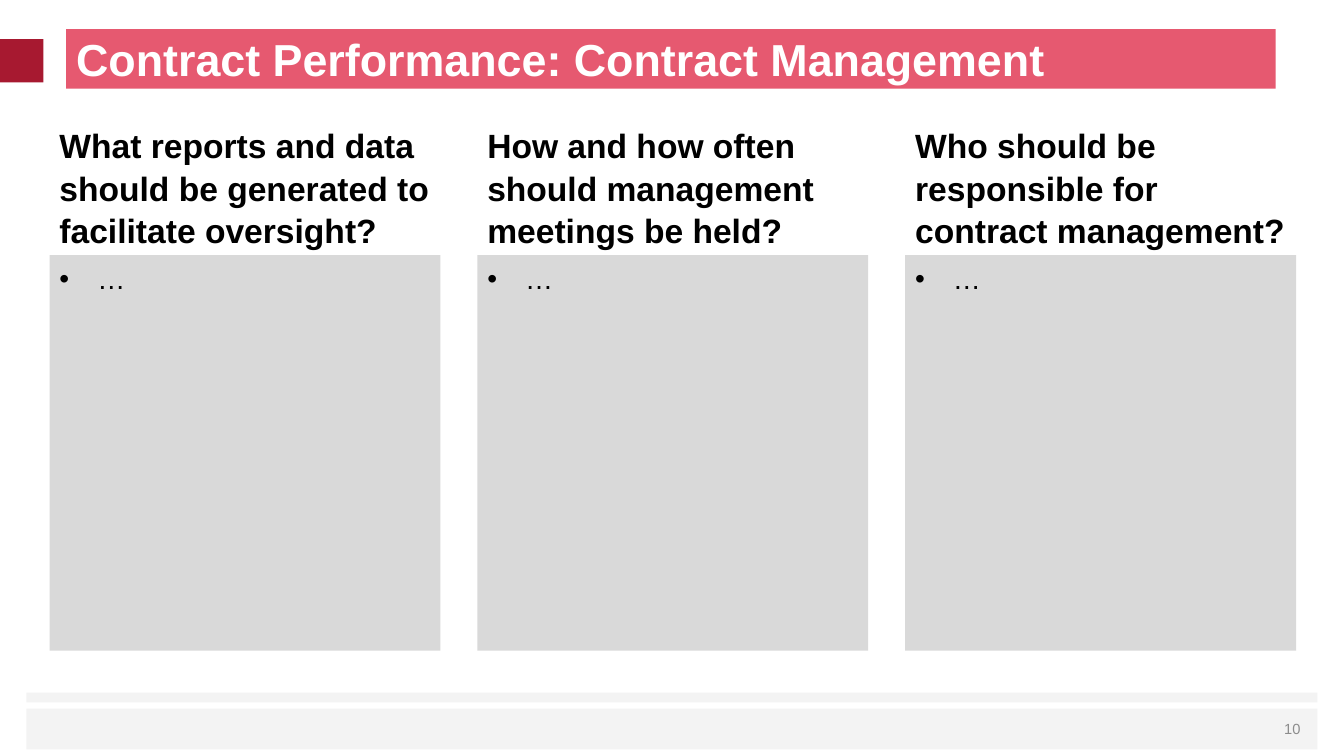
import pptx
import pptx.util
import pptx.dml.color
import pptx.enum.shapes
import pptx.enum.text
import lxml.etree
from pptx.oxml.ns import qn

Pt = pptx.util.Pt
RGB = pptx.dml.color.RGBColor.from_string
ALIGN = pptx.enum.text.PP_ALIGN
ANCHOR = pptx.enum.text.MSO_ANCHOR

theme = {
    "font": "Arial",
    "banner": "E65970", "accent": "A71930", "panel": "D9D9D9", "footer": "F3F3F3",
    "ink": "000000", "light": "FFFFFF", "muted": "8C8C8C",
    "title_size": 32, "question_size": 24, "answer_size": 20, "page_size": 10.5,
}


def add_block(box, fill=None):
    block = slide.shapes.add_shape(pptx.enum.shapes.MSO_SHAPE.RECTANGLE, *map(Pt, box)) if fill \
        else slide.shapes.add_textbox(*map(Pt, box))
    if fill:
        block.shadow.inherit = False
        block.fill.solid()
        block.fill.fore_color.rgb = RGB(theme[fill])
        block.line.fill.background()
    return block


def write(block, text, size, color, bold=False, frame_format={}, paragraph_format={}):
    frame = block.text_frame
    paragraph = frame.paragraphs[0]
    run = paragraph.add_run()
    run.text = text
    run.font.color.rgb = RGB(theme[color])
    font_format = {"name": theme["font"], "size": Pt(theme[size]), "bold": bold}
    for target, values in (
        (frame, {"word_wrap": True, **frame_format}),
        (paragraph, {"alignment": ALIGN.LEFT, **paragraph_format}),
        (run.font, font_format),
    ):
        for key, value in values.items():
            setattr(target, key, value)
    return paragraph


deck = pptx.Presentation()
deck.slide_width, deck.slide_height = Pt(960), Pt(540)
slide = deck.slides.add_slide(deck.slide_layouts[6])

for box, fill in (
    ((18.9, 494.8, 922.2, 7), "footer"),
    ((18.9, 506.2, 922.2, 29.2), "footer"),
    ((0, 27.9, 31, 31), "accent"),
):
    add_block(box, fill)

title = add_block((47.3, 20.9, 864, 42.5), "banner")
write(title, "Contract Performance: Contract Management", "title_size", "light", True,
      {"vertical_anchor": ANCHOR.TOP, "margin_top": 0}, {"line_spacing": 1.05})

questions = (
    "What reports and data should be generated to facilitate oversight?",
    "How and how often should management meetings be held?",
    "Who should be responsible for contract management?",
)
column_left, column_pitch, column_width = 35.4, 305.6, 279.2
panel_top = 182.2
for column, question in enumerate(questions):
    left = column_left + column * column_pitch
    heading = add_block((left, panel_top - 42.5, column_width, 42.5))
    write(heading, question, "question_size", "ink", True,
          {"vertical_anchor": ANCHOR.BOTTOM}, {"line_spacing": 1.05})

    panel = add_block((left, panel_top, column_width, 282.5), "panel")
    answer = write(panel, "…", "answer_size", "ink", False,
                   {"vertical_anchor": ANCHOR.TOP}, {"line_spacing": 1.05})
    properties = answer._p.get_or_add_pPr()
    properties.set("marL", str(Pt(27)))
    properties.set("indent", str(Pt(-27)))
    lxml.etree.SubElement(properties, qn("a:buFont")).set("typeface", theme["font"])
    lxml.etree.SubElement(properties, qn("a:buChar")).set("char", "•")

page_number = add_block((882, 506.2, 54, 28.8))
write(page_number, "10", "page_size", "muted", False,
      {"vertical_anchor": ANCHOR.MIDDLE}, {"alignment": ALIGN.RIGHT})

deck.save("out.pptx")
